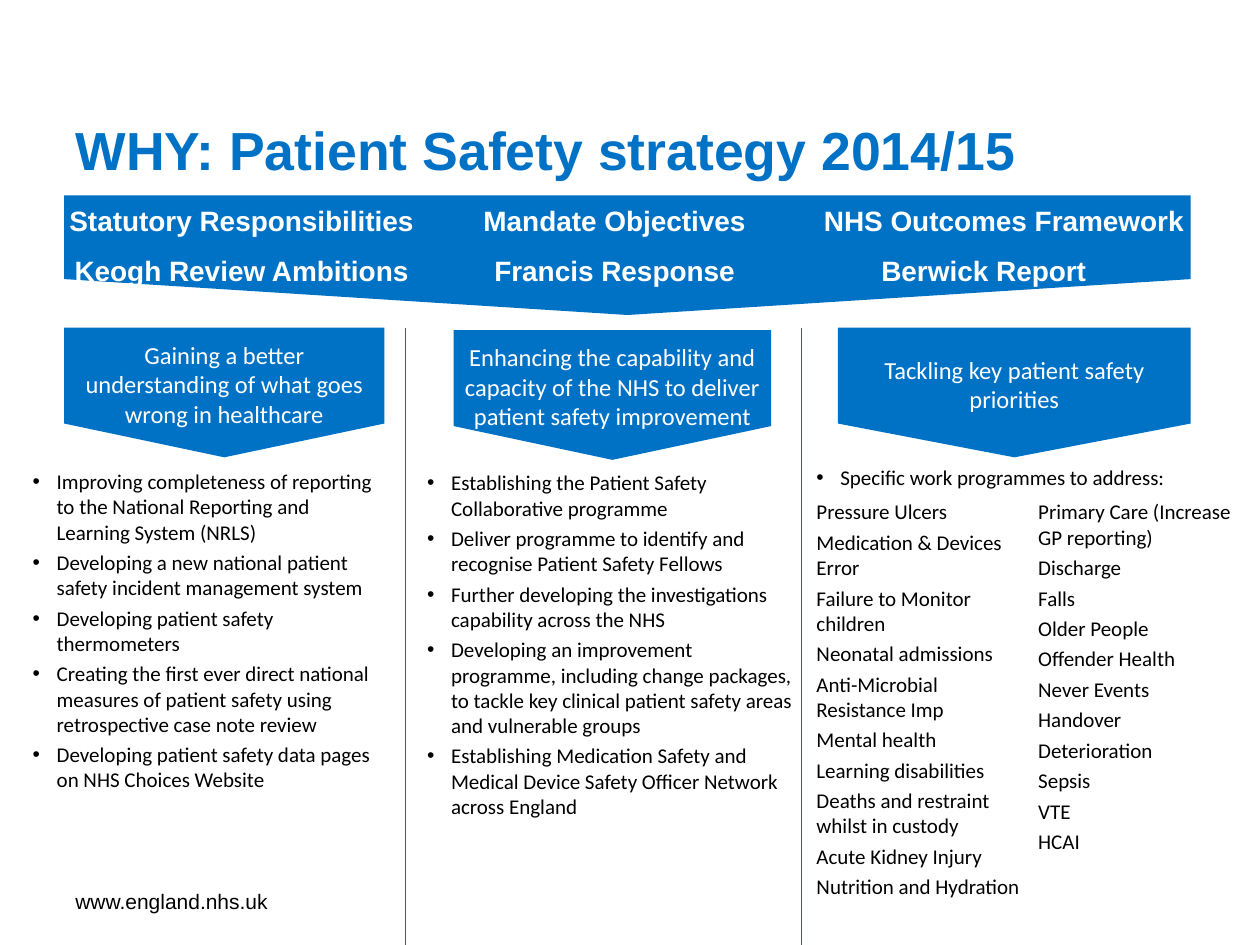
from lxml import etree
from pptx import Presentation
from pptx import util as u
from pptx.dml.color import RGBColor
from pptx.enum import shapes, text
from pptx.oxml.ns import qn

Inches, Pt = u.Inches, u.Pt
THEME = {
    "blue": RGBColor(0x00, 0x72, 0xC6),
    "white": RGBColor(0xFF, 0xFF, 0xFF),
    "black": RGBColor(0x00, 0x00, 0x00),
    "heading": "Arial", "body": "Calibri",
    "title": 30.6, "banner": 16, "pillar": 14, "small": 12,
}

prs = Presentation()
prs.slide_width, prs.slide_height = Inches(10), Inches(7.5)
s = prs.slides.add_slide(prs.slide_layouts[5])


def write(tf, lines, face, size, color, bold=False, bullet=False, tabs=None, inset=None, **fmt):
    tf.word_wrap = True
    if inset is not None:
        for side in ("left", "top", "right", "bottom"):
            setattr(tf, f"margin_{side}", Inches(inset))
    for i, line in enumerate(lines):
        p = tf.paragraphs[0] if i == 0 else tf.add_paragraph()
        pPr = p._p.get_or_add_pPr()
        if bullet:
            pPr.set("marL", str(Inches(0.19)))
            pPr.set("indent", str(-Inches(0.19)))
            etree.SubElement(pPr, qn("a:buFont"), typeface="Arial")
            etree.SubElement(pPr, qn("a:buChar"), char="•")
        if tabs:
            tab_list = etree.SubElement(pPr, qn("a:tabLst"))
            for pos in tabs[i]:
                etree.SubElement(tab_list, qn("a:tab"), pos=str(Inches(pos)), algn="ctr")
        for name, value in fmt.items():
            setattr(p, name, value)
        r = p.add_run()
        r.text = line
        for name, value in {"name": face, "size": Pt(size), "bold": bold}.items():
            setattr(r.font, name, value)
        r.font.color.rgb = color


def down_arrow(x, y, w, h, adj):
    sp = s.shapes.add_shape(
        shapes.MSO_SHAPE.PENTAGON,
        Inches(x + (w - h) / 2), Inches(y + (h - w) / 2), Inches(h), Inches(w))
    sp.rotation = 90
    sp.adjustments[0] = adj
    sp.shadow.inherit = False
    sp.fill.solid()
    sp.fill.fore_color.rgb = THEME["blue"]
    sp.line.fill.background()
    return sp


title = s.shapes.title
for name, value in {"left": 0.5, "top": 0.82, "width": 8.05, "height": 0.73}.items():
    setattr(title, name, Inches(value))
title.text_frame.auto_size = text.MSO_AUTO_SIZE.NONE
title.text_frame.vertical_anchor = text.MSO_ANCHOR.MIDDLE
write(title.text_frame, ["WHY: Patient Safety strategy 2014/15"], THEME["heading"],
      THEME["title"], THEME["blue"], bold=True, alignment=text.PP_ALIGN.LEFT)

down_arrow(0.51, 1.55, 8.94, 0.95, 0.3)

banner = s.shapes.add_textbox(Inches(0.31), Inches(1.43), Inches(9.33), Inches(1.41))
write(banner.text_frame, [
    "\tStatutory Responsibilities\tMandate Objectives\tNHS Outcomes Framework",
    "\tKeogh Review Ambitions\tFrancis Response\tBerwick Report",
], THEME["heading"], THEME["banner"], THEME["white"], bold=True,
    tabs=[(1.51, 4.47, 7.56), (1.51, 4.47, 7.4)], line_spacing=1.5)

pillars = [
    (0.51, 2.6, 2.54, None, "Gaining a better understanding of what goes wrong in healthcare"),
    (3.6, 2.62, 2.52, 0.04,
     "Enhancing the capability and capacity of the NHS to deliver patient safety improvement"),
    (6.65, 2.6, 2.8, None, "Tackling key patient safety priorities"),
]
for x, y, w, inset, label in pillars:
    tf = down_arrow(x, y, w, 1.03, 0.26).text_frame
    tf.vertical_anchor = text.MSO_ANCHOR.MIDDLE
    tf._txBody.bodyPr.set("vert", "vert270")
    write(tf, [label], THEME["body"], THEME["pillar"], THEME["white"],
          inset=inset, alignment=text.PP_ALIGN.CENTER)

for x in (3.22, 6.36):
    line = s.shapes.add_connector(
        shapes.MSO_CONNECTOR.STRAIGHT, Inches(x), Inches(2.6), Inches(x), Inches(7.5))
    line.line.color.rgb = THEME["blue"]
    line.line.width = Pt(0.75)
    etree.SubElement(line._element.spPr, qn("a:effectLst"))

bullet_lists = [
    (0.26, 3.72, 2.79, 2.59, [
        "Improving completeness of reporting to the National Reporting and Learning System (NRLS)",
        "Developing a new national patient safety incident management system",
        "Developing patient safety thermometers",
        "Creating the first ever direct national measures of patient safety using "
        "retrospective case note review",
        "Developing patient safety data pages on NHS Choices Website",
    ]),
    (3.39, 3.73, 2.96, 2.79, [
        "Establishing the Patient Safety Collaborative programme",
        "Deliver programme to identify and recognise Patient Safety Fellows",
        "Further developing the investigations capability across the NHS",
        "Developing an improvement programme, including change packages, to tackle key "
        "clinical patient safety areas and vulnerable groups",
        "Establishing Medication Safety and Medical Device Safety Officer Network across England",
    ]),
    (6.48, 3.69, 2.97, 0.2, ["Specific work programmes to address:"]),
]
for x, y, w, h, lines in bullet_lists:
    box = s.shapes.add_textbox(Inches(x), Inches(y), Inches(w), Inches(h))
    write(box.text_frame, lines, THEME["body"], THEME["small"], THEME["black"],
          bullet=True, inset=0, space_after=Pt(3))

programmes = s.shapes.add_textbox(Inches(6.48), Inches(3.96), Inches(3.41), Inches(3.25))
columns = programmes.text_frame._txBody.bodyPr
columns.set("numCol", "2")
columns.set("spcCol", str(Inches(0.11)))
write(programmes.text_frame, [
    "Pressure Ulcers", "Medication & Devices Error", "Failure to Monitor children",
    "Neonatal admissions", "Anti-Microbial Resistance Imp", "Mental health",
    "Learning disabilities", "Deaths and restraint whilst in custody",
    "Acute Kidney Injury", "Nutrition and Hydration",
    "Primary Care (Increase GP reporting)", "Discharge", "Falls", "Older People",
    "Offender Health", "Never Events", "Handover", "Deterioration", "Sepsis", "VTE", "HCAI",
], THEME["body"], THEME["small"], THEME["black"], inset=0, space_after=Pt(3))

footer = s.shapes.add_textbox(Inches(0.5), Inches(6.95), Inches(2.33), Inches(0.4))
footer.text_frame.vertical_anchor = text.MSO_ANCHOR.MIDDLE
write(footer.text_frame, ["www.england.nhs.uk"], THEME["heading"], THEME["small"], THEME["black"])

prs.save("out.pptx")
